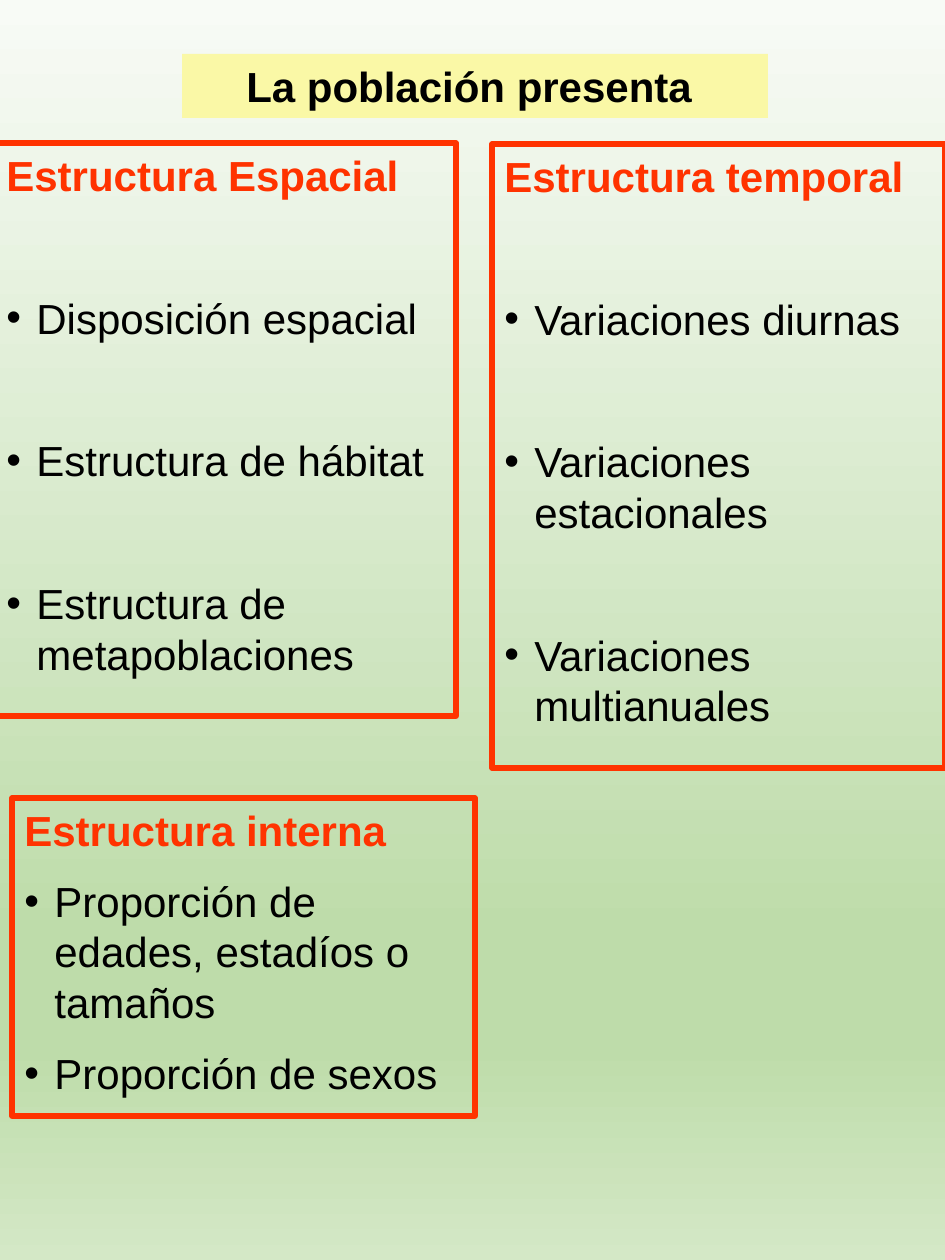
from copy import deepcopy
from dataclasses import dataclass

from lxml import etree
from pptx import Presentation
from pptx.dml.color import RGBColor
from pptx.enum.shapes import MSO_SHAPE
from pptx.enum.text import MSO_ANCHOR, PP_ALIGN
from pptx.oxml.ns import qn
from pptx.util import Pt

EMU_PER_PX = 914400 / 126
SLIDE_WIDTH, SLIDE_HEIGHT = 945, 1260
BULLET_INDENT = 30

BLACK = RGBColor(0x00, 0x00, 0x00)
ORANGE_RED = RGBColor(0xFF, 0x33, 0x00)
PALE_YELLOW = RGBColor(0xFA, 0xF8, 0xA6)
BACKGROUND_STOPS = (
    (0, RGBColor(0xF8, 0xFB, 0xF6)),
    (0.74, RGBColor(0xBE, 0xDC, 0xAA)),
    (0.83, RGBColor(0xBE, 0xDC, 0xAA)),
    (1, RGBColor(0xD4, 0xE8, 0xC6)),
)

FONT_NAME = "Arial"
FONT_SIZE = Pt(24)
LINE_SPACING = Pt(28.8)
TIGHT_GAP = Pt(12)
WIDE_GAP = TIGHT_GAP * 2 + LINE_SPACING


@dataclass(frozen=True)
class Box:
    left: int
    top: int
    width: int
    height: int


@dataclass(frozen=True)
class Panel:
    box: Box
    heading: str
    items: tuple[str, ...]
    gap: int


TITLE_BOX = Box(182, 54, 586, 64)
PANELS = (
    Panel(Box(-6, 143, 462, 573), "Estructura Espacial",
          ("Disposición espacial", "Estructura de hábitat",
           "Estructura de metapoblaciones"), WIDE_GAP),
    Panel(Box(492, 144, 453, 624), "Estructura temporal",
          ("Variaciones diurnas", "Variaciones estacionales",
           "Variaciones multianuales"), WIDE_GAP),
    Panel(Box(12, 798, 463, 318), "Estructura interna",
          ("Proporción de edades, estadíos o tamaños",
           "Proporción de sexos"), TIGHT_GAP),
)


def px(length: int) -> int:
    return round(length * EMU_PER_PX)


def paint_background(slide) -> None:
    fill = slide.background.fill
    fill.gradient()
    fill.gradient_angle = 270
    stop_list = slide.background._cSld.find(".//" + qn("a:gsLst"))
    while len(stop_list) < len(BACKGROUND_STOPS):
        stop_list.append(deepcopy(stop_list[-1]))
    for stop, (position, color) in zip(fill.gradient_stops, BACKGROUND_STOPS):
        stop.position = position
        stop.color.rgb = color


def add_box(slide, box: Box):
    """Add an unfilled, unlined rectangle with top-anchored wrapping text."""
    shape = slide.shapes.add_shape(
        MSO_SHAPE.RECTANGLE, px(box.left), px(box.top), px(box.width), px(box.height))
    shape.shadow.inherit = False
    shape.fill.background()
    shape.line.fill.background()
    shape.text_frame.word_wrap = True
    shape.text_frame.vertical_anchor = MSO_ANCHOR.TOP
    return shape


def format_paragraph(paragraph, color: RGBColor, bold: bool, alignment=PP_ALIGN.LEFT) -> None:
    paragraph.alignment = alignment
    paragraph.line_spacing = LINE_SPACING
    for run in paragraph.runs:
        run.font.name = FONT_NAME
        run.font.size = FONT_SIZE
        run.font.bold = bold
        run.font.color.rgb = color


def add_bullet(paragraph) -> None:
    properties = paragraph._p.get_or_add_pPr()
    properties.set("marL", str(px(BULLET_INDENT)))
    properties.set("indent", str(-px(BULLET_INDENT)))
    etree.SubElement(properties, qn("a:buFont")).set("typeface", FONT_NAME)
    etree.SubElement(properties, qn("a:buChar")).set("char", "•")


def add_title(slide) -> None:
    shape = add_box(slide, TITLE_BOX)
    shape.fill.solid()
    shape.fill.fore_color.rgb = PALE_YELLOW
    shape.text_frame.text = "La población presenta "
    format_paragraph(shape.text_frame.paragraphs[0], BLACK, True, PP_ALIGN.CENTER)


def add_panel(slide, panel: Panel) -> None:
    shape = add_box(slide, panel.box)
    shape.line.color.rgb = ORANGE_RED
    shape.line.width = Pt(3)
    text_frame = shape.text_frame
    text_frame.text = panel.heading
    format_paragraph(text_frame.paragraphs[0], ORANGE_RED, True)
    for item in panel.items:
        paragraph = text_frame.add_paragraph()
        paragraph.text = item
        format_paragraph(paragraph, BLACK, False)
        paragraph.space_before = panel.gap
        add_bullet(paragraph)


def main() -> None:
    presentation = Presentation()
    presentation.slide_width = px(SLIDE_WIDTH)
    presentation.slide_height = px(SLIDE_HEIGHT)
    slide = presentation.slides.add_slide(presentation.slide_layouts[6])
    paint_background(slide)
    add_title(slide)
    for panel in PANELS:
        add_panel(slide, panel)
    presentation.save("out.pptx")


if __name__ == "__main__":
    main()
